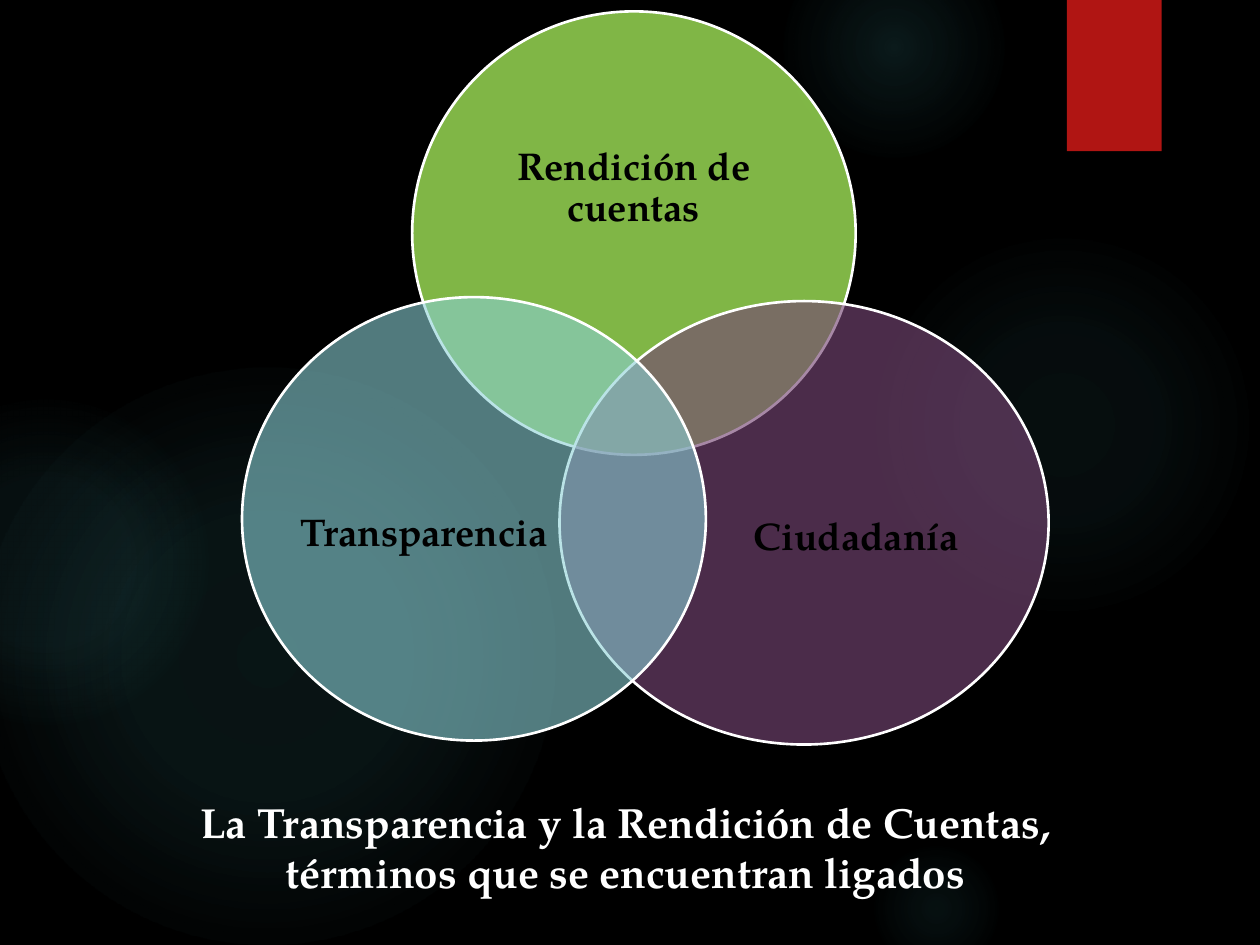
"""Build a slide with a three-circle Venn diagram on a dark glowing background."""
from pptx import Presentation
from pptx.dml.color import RGBColor
from pptx.enum.shapes import MSO_SHAPE
from pptx.enum.text import MSO_ANCHOR, PP_ALIGN
from pptx.oxml import parse_xml
from pptx.oxml.ns import nsdecls, qn
from pptx.util import Cm, Pt

OVAL, RECT = MSO_SHAPE.OVAL, MSO_SHAPE.RECTANGLE
MIDDLE, TOP, CENTER = MSO_ANCHOR.MIDDLE, MSO_ANCHOR.TOP, PP_ALIGN.CENTER

BLACK = RGBColor(0x00, 0x00, 0x00)
WHITE = RGBColor(0xFF, 0xFF, 0xFF)
RED = RGBColor(0xB0, 0x15, 0x13)
TEAL = RGBColor(0x50, 0xB9, 0xC1)
GREEN = RGBColor(0x92, 0xD0, 0x50)
PURPLE = RGBColor(0x76, 0x46, 0x74)
AQUA = RGBColor(0x8A, 0xD0, 0xD6)
FONT = "TeX Gyre Pagella"

# left, top, diameter, then the inner and middle opacity and the fade-out stop
GLOWS = [
    (17.5, 4.65, 7.82, 7, 6, 69),
    (15.8, -1.27, 4.45, 14, 7, 73),
    (17.5, 16.94, 2.74, 9, 5, 66),
    (-0.43, 7.42, 11.63, 11, 10, 75),
    (-2.34, 8.05, 6.55, 8, 8, 72),
]
RIBBON = (21.51, 0, 1.91, 3.05)
CIRCLES = [
    ("Rendición de cuentas", GREEN, 88, (8.31, 0.23, 8.94, 8.94), (9.5, 1.8, 6.55, 4.01)),
    ("Ciudadanía", PURPLE, 64, (11.28, 6.07, 9.86, 8.94), (14.3, 8.38, 5.92, 4.93)),
    ("Transparencia", AQUA, 59, (4.88, 5.99, 9.35, 8.94), (5.74, 8.31, 5.61, 4.93)),
]
CAPTION = ["La Transparencia y la Rendición de Cuentas,", "términos que se encuentran ligados"]
CAPTION_BOX = (2.9, 15.93, 19.41, 2.31)


def add_shape(s, kind, box, color):
    sp = s.shapes.add_shape(kind, *map(Cm, box))
    sp.shadow.inherit = False
    sp.fill.solid()
    sp.fill.fore_color.rgb = color
    sp.line.fill.background()
    return sp


def add_glow(s, left, top, size, inner, middle, end):
    sp = add_shape(s, OVAL, (left, top, size, size), TEAL)
    stops = "".join(
        f'<a:gs pos="{pos * 1000}"><a:srgbClr val="{TEAL}">'
        f'<a:alpha val="{alpha * 1000}"/></a:srgbClr></a:gs>'
        for pos, alpha in ((0, inner), (36, middle), (end, 0))
    )
    grad = parse_xml(
        f'<a:gradFill {nsdecls("a")}><a:gsLst>{stops}</a:gsLst><a:path path="circle">'
        '<a:fillToRect l="50000" t="50000" r="50000" b="50000"/></a:path></a:gradFill>'
    )
    props = sp.element.spPr
    props.replace(props.find(qn("a:solidFill")), grad)


def add_circle(s, box, color, opacity):
    sp = add_shape(s, OVAL, box, color)
    sp.line.color.rgb = WHITE
    sp.line.width = Pt(1.5)
    clr = sp.element.spPr.find(qn("a:solidFill"))[0]
    clr.append(parse_xml(f'<a:alpha {nsdecls("a")} val="{opacity * 1000}"/>'))


def add_text(s, box, lines, size, color, anchor, spacing=1.0):
    tf = s.shapes.add_textbox(*map(Cm, box)).text_frame
    tf.word_wrap = True
    tf.vertical_anchor = anchor
    tf.text = "\n".join(lines)
    for p in tf.paragraphs:
        p.alignment = CENTER
        p.line_spacing = spacing
        for r in p.runs:
            r.font.name = FONT
            r.font.size = Pt(size)
            r.font.bold = True
            r.font.color.rgb = color
    return tf


def main():
    prs = Presentation()
    prs.slide_width, prs.slide_height = Cm(25.4), Cm(19.05)
    s = prs.slides.add_slide(prs.slide_layouts[6])
    s.background.fill.solid()
    s.background.fill.fore_color.rgb = BLACK
    for glow in GLOWS:
        add_glow(s, *glow)
    add_shape(s, RECT, RIBBON, RED)
    for label, color, opacity, box, label_box in CIRCLES:
        add_circle(s, box, color, opacity)
        tf = add_text(s, label_box, [label], 22, BLACK, MIDDLE, 0.9)
        tf.margin_left = tf.margin_right = tf.margin_top = tf.margin_bottom = 0
    add_text(s, CAPTION_BOX, CAPTION, 24, WHITE, TOP)
    prs.save("out.pptx")


if __name__ == "__main__":
    main()
